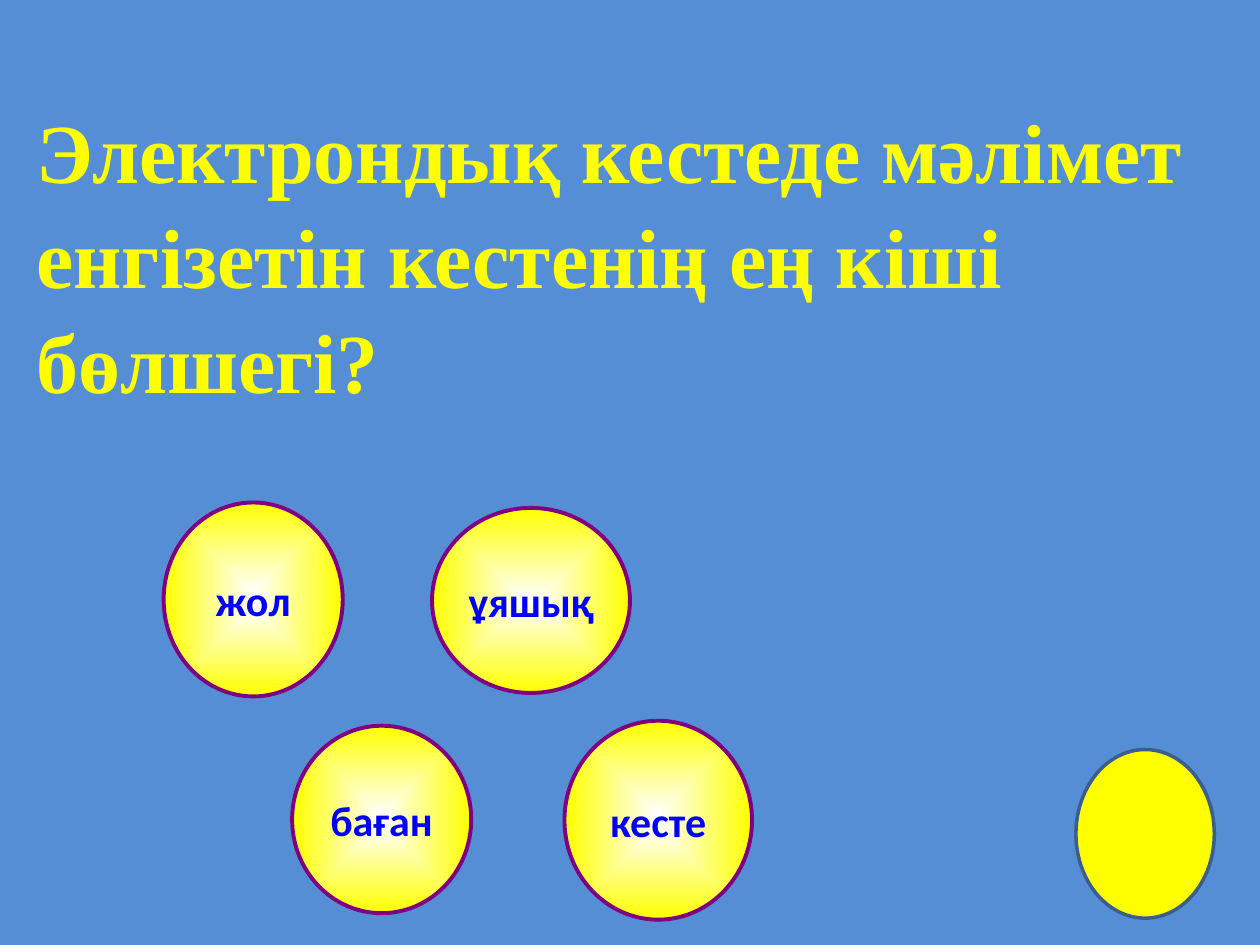
from pptx import Presentation
from pptx.dml.color import RGBColor
from pptx.enum.shapes import MSO_SHAPE
from pptx.enum.text import MSO_ANCHOR, MSO_AUTO_SIZE, PP_ALIGN
from pptx.oxml import parse_xml
from pptx.oxml.ns import nsdecls, qn
from pptx.util import Cm, Pt

OVAL = MSO_SHAPE.OVAL
MIDDLE = MSO_ANCHOR.MIDDLE
NO_FIT = MSO_AUTO_SIZE.NONE
LEFT, CENTER = PP_ALIGN.LEFT, PP_ALIGN.CENTER
TITLE_ONLY = 5


def rgb(color):
    return RGBColor.from_string(color)


class QuizSlide:
    """Style and current slide of a quiz question."""
    background = "558ED5"
    yellow, white = "FFFF00", "FFFFFF"
    purple, blue, steel = "800080", "0000FF", "3A5F8C"
    title_font, answer_font = "Times New Roman", "Calibri"

    def __init__(self, prs):
        self.s = prs.slides.add_slide(prs.slide_layouts[TITLE_ONLY])
        fill = self.s.background.fill
        fill.solid()
        fill.fore_color.rgb = rgb(self.background)

    def set_text(self, tf, text, font, size, color, align):
        tf.auto_size = NO_FIT
        tf.vertical_anchor = MIDDLE
        p = tf.paragraphs[0]
        p.text = text
        p.alignment = align
        p.font.name, p.font.size, p.font.bold = font, Pt(size), True
        p.font.color.rgb = rgb(color)
        return p

    def question(self, text, left, top, width, height):
        sp = self.s.shapes.title
        sp.left, sp.top, sp.width, sp.height = map(Cm, (left, top, width, height))
        p = self.set_text(sp.text_frame, text, self.title_font, 48, self.yellow, LEFT)
        p.line_spacing = 1.04

    def oval(self, box, line_color, line_width):
        sp = self.s.shapes.add_shape(OVAL, *map(Cm, box))
        sp.shadow.inherit = False
        sp.fill.solid()
        sp.fill.fore_color.rgb = rgb(self.yellow)
        sp.line.color.rgb = rgb(line_color)
        sp.line.width = Pt(line_width)
        return sp

    def answer(self, text, *box):
        sp = self.oval(box, self.purple, 2.25)
        self.glow(sp)
        sp.text_frame.word_wrap = False
        self.set_text(sp.text_frame, text, self.answer_font, 24, self.blue, CENTER)

    def glow(self, sp):
        """Gradient from a white centre to a yellow edge."""
        sp.fill.gradient()
        for stop, color, position in zip(sp.fill.gradient_stops,
                                         (self.white, self.yellow), (0, 1)):
            stop.color.rgb = rgb(color)
            stop.position = position
        lin = sp.element.spPr.find(qn("a:gradFill")).find(qn("a:lin"))
        lin.getparent().replace(lin, parse_xml(
            f'<a:path {nsdecls("a")} path="shape">'
            '<a:fillToRect l="50000" t="50000" r="50000" b="50000"/></a:path>'))


def main():
    prs = Presentation()
    prs.slide_width, prs.slide_height = Cm(25.4), Cm(19.05)
    quiz = QuizSlide(prs)

    # Question
    quiz.question("Электрондық кестеде мәлімет енгізетін кестенің ең кіші бөлшегі?",
                  0.48, 0.91, 25.6, 8.38)

    # Plain oval in the corner
    quiz.oval((21.69, 15.11, 2.79, 3.4), quiz.steel, 2)

    # Answers
    quiz.answer("кесте", 11.38, 14.53, 3.78, 4.01)
    quiz.answer("баған", 5.89, 14.63, 3.61, 3.78)
    quiz.answer("жол", 3.3, 10.13, 3.61, 3.91)
    quiz.answer("ұяшық", 8.71, 10.24, 3.99, 3.73)

    prs.save("out.pptx")


if __name__ == "__main__":
    main()
